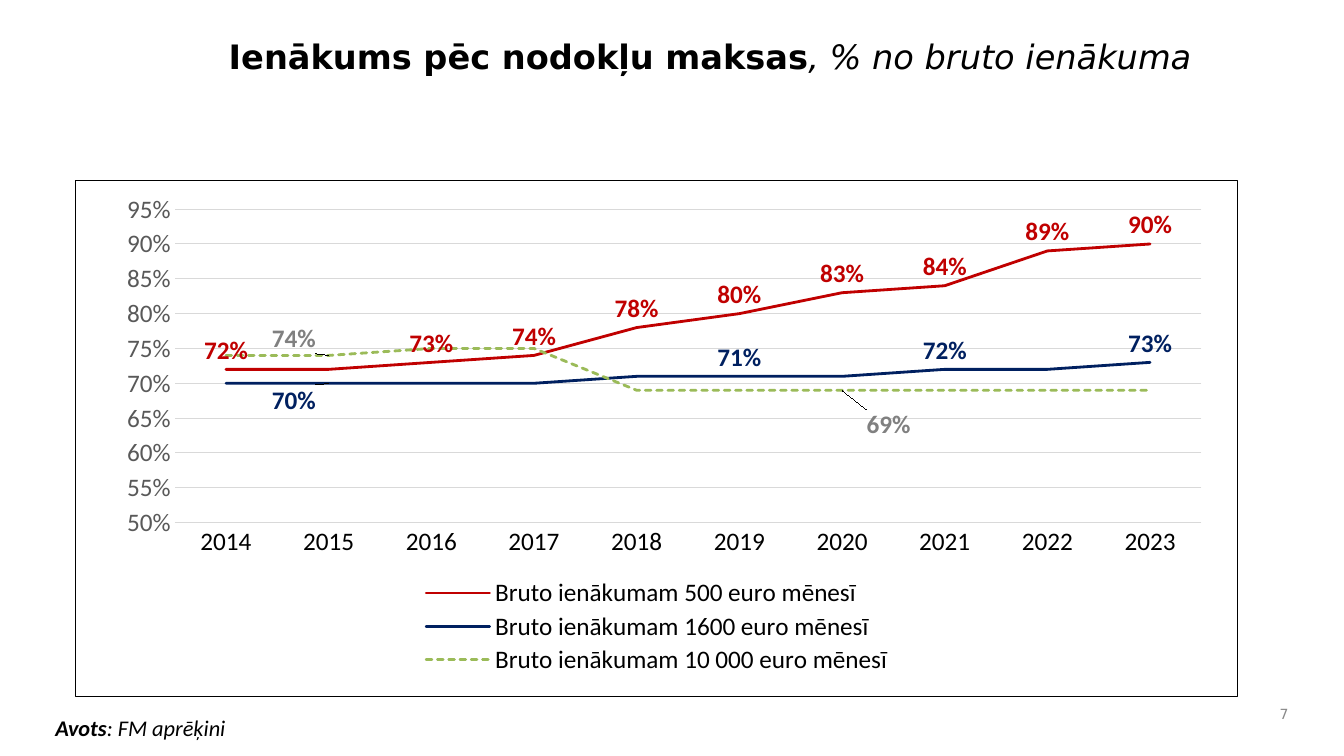
from dataclasses import dataclass

from pptx import Presentation
from pptx.chart.data import CategoryChartData
from pptx.dml.color import RGBColor
from pptx.enum.chart import XL_CHART_TYPE as ChartType
from pptx.enum.chart import XL_LABEL_POSITION as LabelPos
from pptx.enum.chart import XL_LEGEND_POSITION as LegendPos
from pptx.enum.chart import XL_TICK_MARK as TickMark
from pptx.enum.dml import MSO_LINE as Dash
from pptx.enum.text import MSO_ANCHOR as Anchor
from pptx.enum.text import MSO_AUTO_SIZE as AutoSize
from pptx.enum.text import PP_ALIGN as Align
from pptx.oxml import parse_xml
from pptx.oxml.ns import nsdecls
from pptx.util import Cm, Pt


@dataclass(frozen=True)
class Theme:
    text: str = "000000"
    axis: str = "595959"
    grid: str = "D9D9D9"
    number: str = "898989"
    heading_font: str = "DejaVu Sans"
    body_font: str = "Calibri"
    title_size: int = 24
    chart_size: int = 18
    source_size: int = 16
    number_size: int = 10
    hairline: float = 0.75
    series_line: float = 2


THEME = Theme()

# Content: each text is a list of (wording, bold, italic)
TITLE = [("Ienākums pēc nodokļu maksas", True, False),
         (", % no bruto ienākuma", False, True)]
SOURCE = [("Avots", True, True), (": FM aprēķini", False, True)]
PAGE_NUMBER = [("7", False, False)]

YEARS = [str(year) for year in range(2014, 2024)]
# "moved" maps a year to its label's shift, as shares of the chart's size
SERIES = [
    dict(name="Bruto ienākumam 500 euro mēnesī",
         values=(0.72, 0.72, 0.73, 0.74, 0.78, 0.8, 0.83, 0.84, 0.89, 0.9),
         color="C00000", label_color="C00000", dashed=False,
         position=LabelPos.ABOVE, hidden={"2015"}, moved={}),
    dict(name="Bruto ienākumam 1600 euro mēnesī",
         values=(0.7, 0.7, 0.7, 0.7, 0.71, 0.71, 0.71, 0.72, 0.72, 0.73),
         color="002060", label_color="002060", dashed=False,
         position=LabelPos.ABOVE,
         hidden={"2014", "2016", "2017", "2018", "2020", "2022"},
         moved={"2015": (-0.03, 0.07)}),
    dict(name="Bruto ienākumam 10 000 euro mēnesī",
         values=(0.74, 0.74, 0.75, 0.75, 0.69, 0.69, 0.69, 0.69, 0.69, 0.69),
         color="9BBB59", label_color="808080", dashed=True,
         position=LabelPos.BELOW, hidden=set(YEARS) - {"2015", "2020"},
         moved={"2015": (-0.03, -0.07), "2020": (0.04, 0.03)}),
]

# Places: left, top, width, height in centimetres
PLACES = dict(title=(5.51, 0.78, 25.37, 2.69), chart=(1.9, 4.53, 29.3, 13.04),
              source=(1.14, 17.86, 18.64, 0.84), number=(31.17, 17.58, 1.55, 0.84))
PLOT_LAYOUT = (0.085, 0.056, 0.884, 0.607)
LEGEND_LAYOUT = (0.295, 0.764, 0.41, 0.2)


def place(name):
    return [Cm(length) for length in PLACES[name]]


def style_font(font, size, color, family, bold=False, italic=False):
    font.size, font.name, font.bold, font.italic = Pt(size), family, bold, italic
    font.color.rgb = RGBColor.from_string(color)


def style_line(line, color, width):
    line.color.rgb = RGBColor.from_string(color)
    line.width = Pt(width)


def write(box, name, parts, size, color, family, align=Align.LEFT, anchor=Anchor.TOP):
    box.left, box.top, box.width, box.height = place(name)
    frame = box.text_frame
    frame.word_wrap, frame.auto_size = True, AutoSize.NONE
    frame.vertical_anchor = anchor
    para = frame.paragraphs[0]
    para.alignment, para.space_before = align, Pt(0)
    for text, bold, italic in parts:
        span = para.add_run()
        span.text = text
        style_font(span.font, size, color, family, bold, italic)
    return para


def manual_layout(lengths, inner=False):
    target = '<c:layoutTarget val="inner"/>' if inner else ""
    modes = '<c:xMode val="edge"/><c:yMode val="edge"/>' if len(lengths) == 4 else ""
    sizes = "".join(f'<c:{tag} val="{value}"/>' for tag, value in zip("xywh", lengths))
    return parse_xml(f'<c:layout {nsdecls("c")}><c:manualLayout>{target}{modes}{sizes}'
                     '</c:manualLayout></c:layout>')


def drop_layout(element):
    for old in element.xpath("c:layout"):
        element.remove(old)


def label_series(series, item):
    labels = series.data_labels
    labels.show_value, labels.position = True, item["position"]
    labels.number_format, labels.number_format_is_linked = "0%", False
    font_style = (THEME.chart_size, item["label_color"], THEME.body_font, True)
    style_font(labels.font, *font_style)
    special = [year for year in YEARS if year in item["hidden"] or year in item["moved"]]
    for order, year in enumerate(special):
        index = YEARS.index(year)
        if year in item["hidden"]:
            labels._element.insert(order, parse_xml(
                f'<c:dLbl {nsdecls("c")}><c:idx val="{index}"/><c:delete val="1"/></c:dLbl>'))
            continue
        label = series.points[index].data_label
        label.position = item["position"]
        style_font(label.font, *font_style)
        element = labels._element.xpath(f"c:dLbl[c:idx/@val={index}]")[0]
        drop_layout(element)
        element.xpath("c:idx")[0].addnext(manual_layout(item["moved"][year]))
    # Moved labels have no leader lines
    for old in labels._element.xpath("c:showLeaderLines"):
        labels._element.remove(old)
    labels._element.append(parse_xml(
        f'<c:extLst {nsdecls("c")}><c:ext uri="{{CE6537A1-D6FC-4f65-9D91-7224C49458BB}}" '
        'xmlns:c15="http://schemas.microsoft.com/office/drawing/2012/chart">'
        '<c15:showLeaderLines val="0"/></c:ext></c:extLst>'))


def add_income_chart(page):
    data = CategoryChartData(number_format="0%")
    data.categories = YEARS
    for item in SERIES:
        data.add_series(item["name"], item["values"])
    chart = page.shapes.add_chart(ChartType.LINE, *place("chart"), data).chart
    chart.has_title = False
    style_font(chart.font, THEME.chart_size, THEME.text, THEME.body_font)

    # Axes
    years, shares = chart.category_axis, chart.value_axis
    for axis, color in ((years, THEME.text), (shares, THEME.axis)):
        axis.major_tick_mark = axis.minor_tick_mark = TickMark.NONE
        style_font(axis.tick_labels.font, THEME.chart_size, color, THEME.body_font)
    style_line(years.format.line, THEME.grid, THEME.hairline)
    shares.format.line.fill.background()
    shares.minimum_scale, shares.maximum_scale, shares.major_unit = 0.5, 0.95, 0.05
    shares.tick_labels.number_format = "0%"
    shares.tick_labels.number_format_is_linked = False
    style_line(shares.major_gridlines.format.line, THEME.grid, THEME.hairline)

    # Lines and their labels
    for series, item in zip(chart.plots[0].series, SERIES):
        series.smooth = False
        style_line(series.format.line, item["color"], THEME.series_line)
        series.format.line._get_or_add_ln().set("cap", "rnd")
        if item["dashed"]:
            series.format.line.dash_style = Dash.SQUARE_DOT
        label_series(series, item)

    # Legend, plot area and frame
    chart.has_legend = True
    legend = chart.legend
    legend.position, legend.include_in_layout = LegendPos.BOTTOM, False
    style_font(legend.font, THEME.chart_size, THEME.text, THEME.body_font)
    drop_layout(legend._element)
    legend._element.xpath("c:legendPos")[0].addnext(manual_layout(LEGEND_LAYOUT))
    space = chart._chartSpace
    plot_area = space.xpath("c:chart/c:plotArea")[0]
    drop_layout(plot_area)
    plot_area.insert(0, manual_layout(PLOT_LAYOUT, inner=True))
    space.xpath("c:chart")[0].addnext(parse_xml(
        f'<c:spPr {nsdecls("c", "a")}><a:noFill/><a:ln w="{Pt(THEME.hairline)}"><a:solidFill>'
        f'<a:srgbClr val="{THEME.text}"/></a:solidFill></a:ln></c:spPr>'))


def main():
    deck = Presentation()
    deck.slide_width, deck.slide_height = Cm(33.87), Cm(19.05)
    page = deck.slides.add_slide(deck.slide_layouts[1])

    # Title, source note and page number
    write(page.shapes.title, "title", TITLE, THEME.title_size, THEME.text, THEME.heading_font)
    note = write(page.placeholders[1], "source", SOURCE, THEME.source_size, THEME.text,
                 THEME.body_font)
    properties = note._p.get_or_add_pPr()
    properties.set("marL", "0")
    properties.set("indent", "0")
    properties.append(parse_xml(f'<a:buNone {nsdecls("a")}/>'))
    write(page.shapes.add_textbox(*place("number")), "number", PAGE_NUMBER,
          THEME.number_size, THEME.number, THEME.heading_font, Align.RIGHT, Anchor.MIDDLE)

    add_income_chart(page)
    deck.save("out.pptx")


if __name__ == "__main__":
    main()
